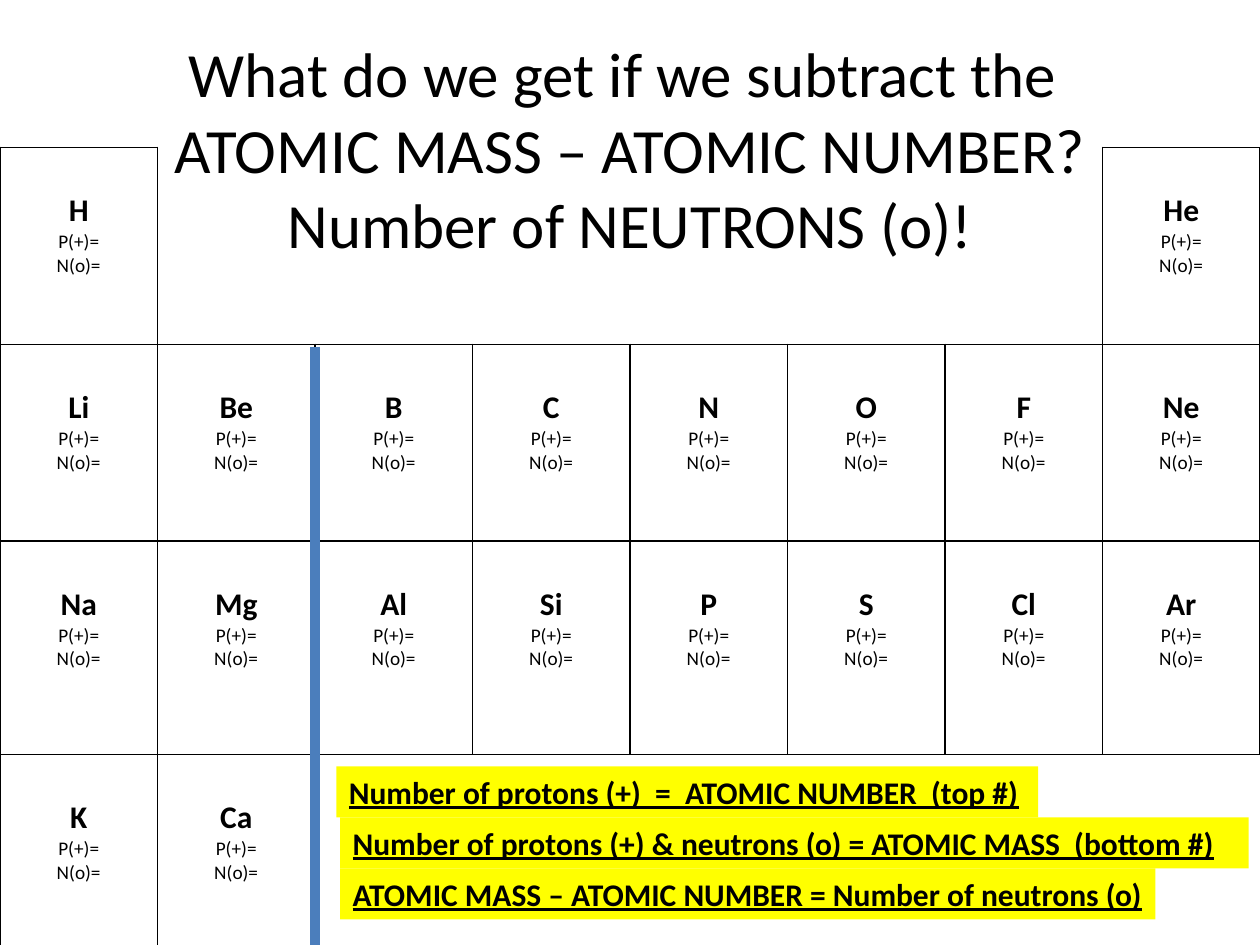
from lxml import etree
from pptx import Presentation, util as u
from pptx.dml.color import RGBColor
from pptx.enum import shapes, text
from pptx.oxml import ns

BLACK = RGBColor(0, 0, 0)
BLUE = RGBColor(0x4B, 0x7E, 0xBC)
YELLOW = RGBColor(0xFF, 0xFF, 0)
FONT = "Calibri"
WIDE, HIGH = u.Inches(10), u.Inches(7.5)

TITLE = ["What do we get if we subtract the ", "ATOMIC MASS – ATOMIC NUMBER?", "Number of NEUTRONS (o)!"]
ATOMS = [
    ["H", "", "", "", "", "", "", "He"],
    ["Li", "Be", "B", "C", "N", "O", "F", "Ne"],
    ["Na", "Mg", "Al", "Si", "P", "S", "Cl", "Ar"],
    ["K", "Ca", "", "", "", "", "", ""],
]
ROWS = [20.83, 20.83, 22.6, 20.83]
NOTES = [
    ("Number of protons (+)  =  ATOMIC NUMBER  (top #)", 26.7, 55.7),
    ("Number of protons (+) & neutrons (o) = ATOMIC MASS  (bottom #)", 27, 72.1),
    ("ATOMIC MASS – ATOMIC NUMBER = Number of neutrons (o)", 27, 64.7),
]
SIDES = {"L": (0, -1), "R": (0, 1), "T": (-1, 0), "B": (1, 0)}


def place(x, y, w, h):
    """Turn percent shares of the slide into lengths."""
    return [int(n * side / 100) for n, side in zip((x, y, w, h), (WIDE, HIGH) * 2)]


def write(para, words, size, bold=False, under=False):
    """Add one run of black text."""
    run = para.add_run()
    run.text = words
    font = run.font
    font.name, font.size = FONT, u.Pt(size)
    font.bold, font.underline = bold, under
    font.color.rgb = BLACK


def head(slide, box):
    """Place the centred question and its answer."""
    frame = slide.shapes.add_textbox(*box).text_frame
    frame.word_wrap = True
    frame.vertical_anchor = text.MSO_ANCHOR.MIDDLE
    para = frame.paragraphs[0]
    para.alignment = text.PP_ALIGN.CENTER
    for i, line in enumerate(TITLE):
        if i:
            para.add_line_break()
        write(para, line, 36)


def filled(row, col):
    """Tell whether an element stands at this place."""
    return 0 <= row < len(ATOMS) and 0 <= col < len(ATOMS[0]) and bool(ATOMS[row][col])


def edge(cell, row, col):
    """Rule each side of a cell that touches an element."""
    props = cell._tc.get_or_add_tcPr()
    for i, (side, (down, right)) in enumerate(SIDES.items()):
        line = etree.Element(ns.qn(f"a:ln{side}"), w=str(u.Pt(1)))
        if filled(row, col) or filled(row + down, col + right):
            paint = etree.SubElement(line, ns.qn("a:solidFill"))
            etree.SubElement(paint, ns.qn("a:srgbClr"), val=str(BLACK))
        else:
            etree.SubElement(line, ns.qn("a:noFill"))
        props.insert(i, line)


def atom(cell, name):
    """Write an element's symbol and its two counts."""
    cell.margin_top = u.Inches(0.35)
    frame = cell.text_frame
    for i, (words, size) in enumerate([(name, 18), ("P(+)=", 11), ("N(o)=", 11)]):
        para = frame.add_paragraph() if i else frame.paragraphs[0]
        para.alignment = text.PP_ALIGN.CENTER
        write(para, words, size, bold=not i)


def chart(slide, box):
    """Place the table of elements in the given box."""
    count = len(ATOMS[0])
    grid = slide.shapes.add_table(len(ATOMS), count, *box).table
    grid.first_row = grid.horz_banding = False
    for col in grid.columns:
        col.width = box[2] // count
    for r, names in enumerate(ATOMS):
        grid.rows[r].height = int(box[3] * ROWS[r] / sum(ROWS))
        for c, name in enumerate(names):
            cell = grid.cell(r, c)
            cell.fill.background()
            edge(cell, r, c)
            if name:
                atom(cell, name)


def split(slide, box):
    """Draw the thick upright rule down the left of the box."""
    x, y, w, h = box
    rule = slide.shapes.add_connector(shapes.MSO_CONNECTOR.STRAIGHT, x, y, x + w, y + h)
    rule.line.color.rgb = BLUE
    rule.line.width = u.Pt(6)
    etree.SubElement(rule._element.spPr, ns.qn("a:effectLst"))


def note(slide, box, words):
    """Place one highlighted rule."""
    bar = slide.shapes.add_shape(shapes.MSO_SHAPE.RECTANGLE, *box)
    bar.shadow.inherit = False
    bar.fill.solid()
    bar.fill.fore_color.rgb = YELLOW
    bar.line.fill.background()
    frame = bar.text_frame
    frame.word_wrap = False
    frame.vertical_anchor = text.MSO_ANCHOR.TOP
    para = frame.paragraphs[0]
    para.alignment = text.PP_ALIGN.LEFT
    write(para, words, 18, bold=True, under=True)


def main():
    """Build and save the slide."""
    deck = Presentation()
    deck.slide_width, deck.slide_height = WIDE, HIGH
    slide = deck.slides.add_slide(deck.slide_layouts[6])
    head(slide, place(5, 0, 90, 31.3))
    chart(slide, place(0, 15.6, 100, sum(ROWS)))
    split(slide, place(25, 36.7, 0, 63.3))
    for i, (words, x, w) in enumerate(NOTES):
        note(slide, place(x, 81.1 + 5.4 * i, w, 5.4), words)
    deck.save("out.pptx")


if __name__ == "__main__":
    main()
